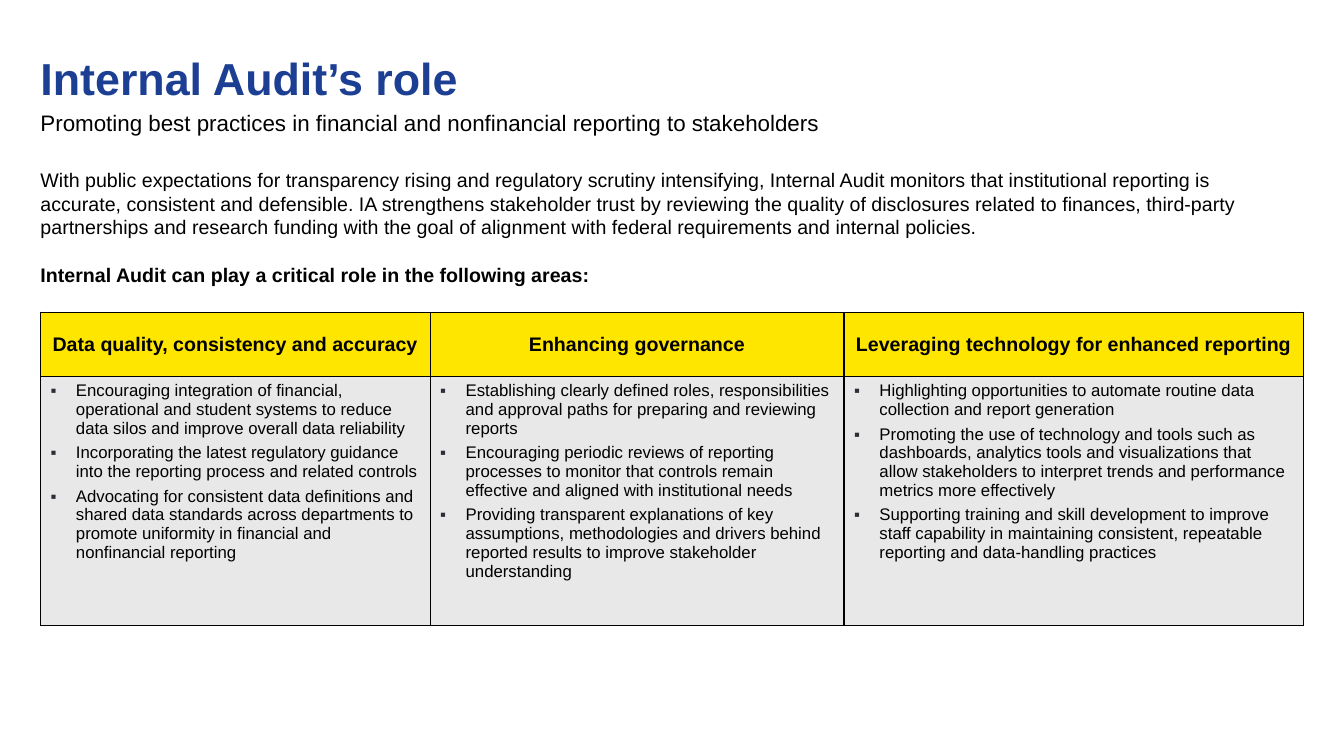
import pptx
import pptx.util
import pptx.dml.color
import pptx.enum.text
import pptx.oxml
import pptx.oxml.ns
from dataclasses import dataclass
from pptx.util import Cm

ANCHOR = pptx.enum.text.MSO_ANCHOR
ALIGN = pptx.enum.text.PP_ALIGN


@dataclass(frozen=True)
class Theme:
    font: str = "Arial"
    title_colour: str = "1C3F94"
    text_colour: str = "000000"
    bullet_colour: str = "2E2E38"
    header_fill: str = "FFE600"
    body_fill: str = "E8E8E8"
    border_colour: str = "000000"
    title_size: int = 32
    subtitle_size: int = 16
    body_size: int = 14
    list_size: int = 12


THEME = Theme()

INTRO = (
    "With public expectations for transparency rising and regulatory scrutiny intensifying, "
    "Internal Audit monitors that institutional reporting is accurate, consistent and defensible. "
    "IA strengthens stakeholder trust by reviewing the quality of disclosures related to finances, "
    "third-party partnerships and research funding with the goal of alignment with federal "
    "requirements and internal policies."
)

# Each area: heading, column width in cm, bullets
AREAS = [
    ("Data quality, consistency and accuracy", 9.82, [
        "Encouraging integration of financial, operational and student systems to reduce data silos "
        "and improve overall data reliability",
        "Incorporating the latest regulatory guidance into the reporting process and related controls",
        "Advocating for consistent data definitions and shared data standards across departments "
        "to promote uniformity in financial and nonfinancial reporting",
    ]),
    ("Enhancing governance", 10.43, [
        "Establishing clearly defined roles, responsibilities and approval paths for preparing "
        "and reviewing reports",
        "Encouraging periodic reviews of reporting processes to monitor that controls remain "
        "effective and aligned with institutional needs",
        "Providing transparent explanations of key assumptions, methodologies and drivers behind "
        "reported results to improve stakeholder understanding",
    ]),
    ("Leveraging technology for enhanced reporting", 11.58, [
        "Highlighting opportunities to automate routine data collection and report generation",
        "Promoting the use of technology and tools such as dashboards, analytics tools and "
        "visualizations that allow stakeholders to interpret trends and performance metrics "
        "more effectively",
        "Supporting training and skill development to improve staff capability in maintaining "
        "consistent, repeatable reporting and data‑handling practices",
    ]),
]


def colour(value):
    return pptx.dml.color.RGBColor.from_string(value)


def add_xml(parent, xml):
    namespace = pptx.oxml.ns.nsdecls("a")
    parent.append(pptx.oxml.parse_xml(xml.replace(" ", f" {namespace} ", 1)))


class SlideBuilder:
    def __init__(self, slide, theme):
        self.slide = slide
        self.theme = theme

    def add_run(self, paragraph, text, size, bold=False, text_colour=None):
        run = paragraph.add_run()
        run.text = text
        run.font.name = self.theme.font
        run.font.size = pptx.util.Pt(size)
        run.font.bold = bold
        run.font.color.rgb = colour(text_colour or self.theme.text_colour)

    def place_text(self, index, box, inset_top, inset_bottom):
        """Move a placeholder and return its text frame."""
        shape = self.slide.placeholders[index]
        shape.left, shape.top, shape.width, shape.height = (Cm(length) for length in box)
        frame = shape.text_frame
        frame.word_wrap = True
        frame.auto_size = pptx.enum.text.MSO_AUTO_SIZE.NONE
        frame.vertical_anchor = ANCHOR.TOP
        frame.margin_left = frame.margin_right = 0
        frame.margin_top, frame.margin_bottom = Cm(inset_top), Cm(inset_bottom)
        return frame

    def format_plain(self, paragraph, space_before=0, line_spacing=1.0):
        properties = paragraph._p.get_or_add_pPr()
        properties.set("marL", "0")
        properties.set("indent", "0")
        add_xml(properties, "<a:buNone />")
        paragraph.alignment = ALIGN.LEFT
        paragraph.space_before = pptx.util.Pt(space_before)
        paragraph.line_spacing = line_spacing

    def format_bullet(self, paragraph):
        properties = paragraph._p.get_or_add_pPr()
        properties.set("marL", str(Cm(0.64)))
        properties.set("indent", str(-Cm(0.64)))
        add_xml(properties, f'<a:buClr ><a:srgbClr val="{self.theme.bullet_colour}"/></a:buClr>')
        add_xml(properties, '<a:buFont typeface="Arial"/>')
        add_xml(properties, '<a:buChar char="▪"/>')
        paragraph.space_after = pptx.util.Pt(4)

    def format_cell(self, cell, fill, anchor):
        cell.fill.solid()
        cell.fill.fore_color.rgb = colour(fill)
        cell.vertical_anchor = anchor
        properties = cell._tc.get_or_add_tcPr()
        for position, side in enumerate(("lnL", "lnR", "lnT", "lnB")):
            namespace = pptx.oxml.ns.nsdecls("a")
            properties.insert(position, pptx.oxml.parse_xml(
                f'<a:{side} {namespace} w="12700"><a:solidFill>'
                f'<a:srgbClr val="{self.theme.border_colour}"/></a:solidFill></a:{side}>'))

    def add_title(self, text):
        frame = self.place_text(0, (1.02, 1.02, 18.8, 1.02), 0.25, 0)
        self.format_plain(frame.paragraphs[0])
        self.add_run(frame.paragraphs[0], text, self.theme.title_size, True, self.theme.title_colour)

    def add_subtitle(self, text):
        frame = self.place_text(1, (1.02, 2.69, 25.43, 1.27), 0.13, 0.13)
        self.format_plain(frame.paragraphs[0], line_spacing=0.9)
        self.add_run(frame.paragraphs[0], text, self.theme.subtitle_size)

    def add_intro(self, text, lead_in):
        frame = self.place_text(2, (1.02, 4.24, 30.96, 3), 0, 0)
        self.format_plain(frame.paragraphs[0])
        self.add_run(frame.paragraphs[0], text, self.theme.body_size)
        paragraph = frame.add_paragraph()
        self.format_plain(paragraph, space_before=17)
        self.add_run(paragraph, lead_in, self.theme.body_size, bold=True)

    def add_area_table(self, areas):
        widths = [width for _, width, _ in areas]
        table = self.slide.shapes.add_table(
            2, len(areas), Cm(1.02), Cm(7.87), Cm(sum(widths)), Cm(7.9)).table
        table.rows[0].height, table.rows[1].height = Cm(1.62), Cm(6.28)
        for column, (heading, width, bullets) in enumerate(areas):
            table.columns[column].width = Cm(width)
            # Heading cell
            cell = table.cell(0, column)
            self.format_cell(cell, self.theme.header_fill, ANCHOR.MIDDLE)
            paragraph = cell.text_frame.paragraphs[0]
            paragraph.alignment = ALIGN.CENTER
            self.add_run(paragraph, heading, self.theme.body_size, bold=True)
            # Bullet cell
            cell = table.cell(1, column)
            self.format_cell(cell, self.theme.body_fill, ANCHOR.TOP)
            frame = cell.text_frame
            for number, text in enumerate(bullets):
                paragraph = frame.add_paragraph() if number else frame.paragraphs[0]
                self.format_bullet(paragraph)
                self.add_run(paragraph, text, self.theme.list_size)


def main():
    presentation = pptx.Presentation()
    presentation.slide_width, presentation.slide_height = Cm(33.87), Cm(19.05)
    # Layout with a title and two body placeholders
    slide = presentation.slides.add_slide(presentation.slide_layouts[3])
    builder = SlideBuilder(slide, THEME)
    builder.add_title("Internal Audit’s role")
    builder.add_subtitle(
        "Promoting best practices in financial and nonfinancial reporting to stakeholders")
    builder.add_intro(INTRO, "Internal Audit can play a critical role in the following areas:")
    builder.add_area_table(AREAS)
    presentation.save("out.pptx")


if __name__ == "__main__":
    main()
